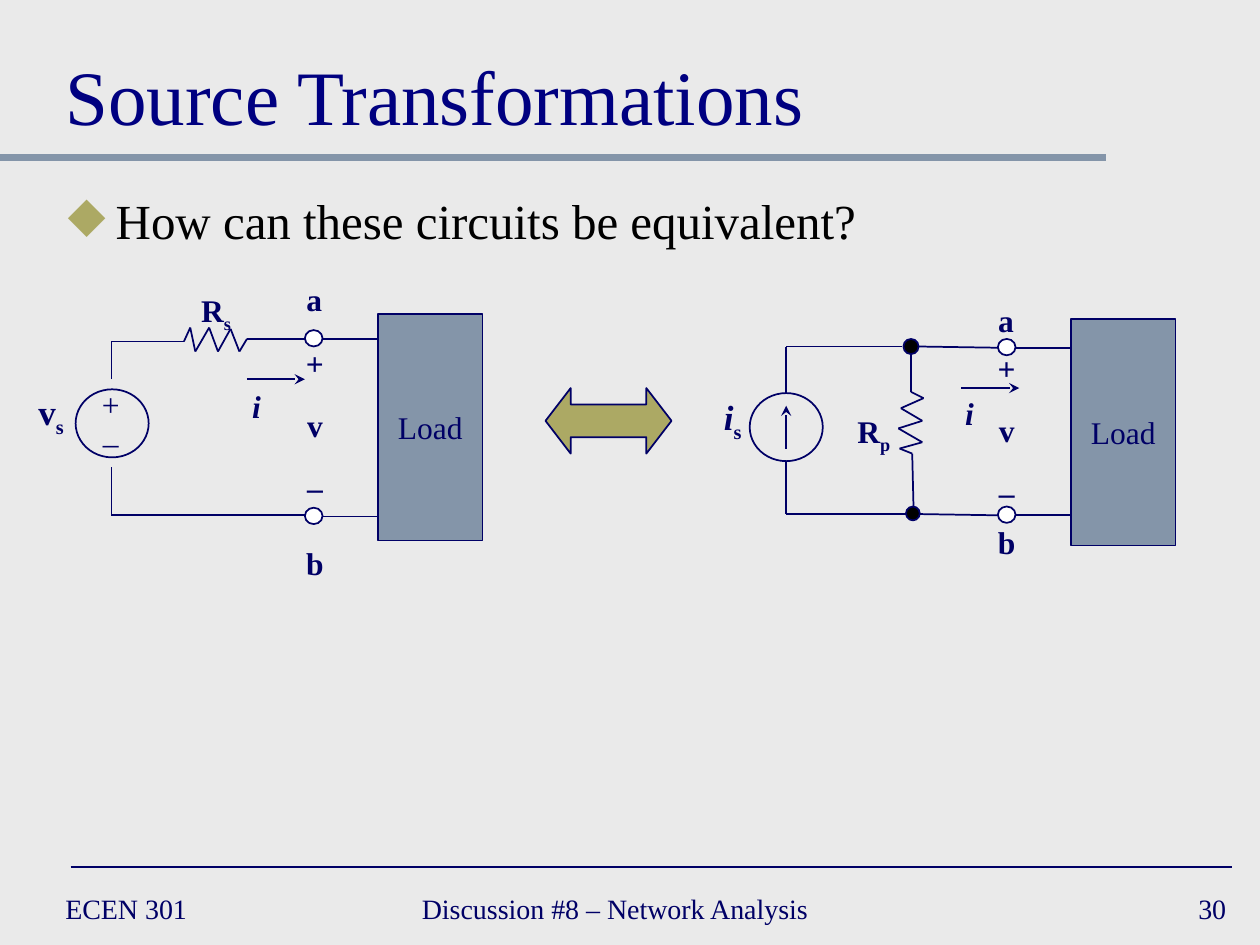
import itertools
import lxml.etree
import pptx
import pptx.util
import pptx.dml.color
import pptx.enum.shapes
import pptx.enum.text
import pptx.oxml.ns


class Theme:
    font = "Times New Roman"
    back, ink, head, black, white = "EAEAEA", "000066", "000080", "000000", "FFFFFF"
    steel, gold = "8495A9", "ACA964"
    title, body, source, label, foot = 44, 28, 20, 18, 16
    thin, thick = 1, 4


Pt = pptx.util.Pt
Kind = pptx.enum.shapes.MSO_SHAPE
Align = pptx.enum.text.PP_ALIGN
Anchor = pptx.enum.text.MSO_ANCHOR
qn = pptx.oxml.ns.qn
tint = pptx.dml.color.RGBColor.from_string

deck = pptx.Presentation()
deck.slide_width = pptx.util.Inches(10)
deck.slide_height = pptx.util.Inches(7.5)
col = deck.slide_width / 100
row = deck.slide_height / 75
slide = deck.slides.add_slide(deck.slide_layouts[5])
slide.background.fill.solid()
slide.background.fill.fore_color.rgb = tint(Theme.back)
shapes = slide.shapes


def write(text, x=0, y=0, w=0, h=0, box=None, sub="", size=Theme.label, color=Theme.ink,
          bold=False, italic=False, align=Align.CENTER, anchor=Anchor.TOP, wrap=False,
          gap=0, bullet=""):
    box = box or shapes.add_textbox(int(x * col), int(y * row), int(w * col), int(h * row))
    frame = box.text_frame
    frame.word_wrap = wrap
    frame.vertical_anchor = anchor
    for i, part in enumerate(text.split("\n")):
        para = frame.paragraphs[0] if i == 0 else frame.add_paragraph()
        if bullet:
            props = para._p.get_or_add_pPr()
            props.set("marL", str(int(3.8 * col)))
            props.set("indent", str(int(-3.8 * col)))
            shade = lxml.etree.SubElement(props, qn("a:buClr"))
            lxml.etree.SubElement(shade, qn("a:srgbClr"), val=Theme.gold)
            lxml.etree.SubElement(props, qn("a:buChar"), char=bullet)
        para.alignment = align
        if i:
            para.space_before = Pt(gap)
        for word in filter(None, (part, sub)):
            run = para.add_run()
            run.text = word
            run.font.name = Theme.font
            run.font.size = Pt(size)
            run.font.bold = bold
            run.font.italic = italic and word is part
            run.font.color.rgb = tint(color)
            if word is sub:
                run._r.get_or_add_rPr().set("baseline", "-25000")


def wire(*points, color=Theme.ink, width=Theme.thin, arrow=False):
    for (x1, y1), (x2, y2) in itertools.pairwise(points):
        line = shapes.add_connector(pptx.enum.shapes.MSO_CONNECTOR.STRAIGHT,
                                    int(x1 * col), int(y1 * row), int(x2 * col), int(y2 * row))
        line.line.color.rgb = tint(color)
        line.line.width = Pt(width)
        lxml.etree.SubElement(line._element.spPr, qn("a:effectLst"))
        if arrow:
            lxml.etree.SubElement(line.line._get_or_add_ln(), qn("a:tailEnd"), type="stealth")


wire((0, 12.5), (87.8, 12.5), color=Theme.steel, width=Theme.thick)
wire((5.6, 68.8), (97.8, 68.8))
for text, x, w, align in (("ECEN 301", 4.2, 21.7, Align.LEFT),
                          ("Discussion #8 – Network Analysis", 32.5, 38.3, Align.LEFT),
                          ("30", 77.5, 20.8, Align.RIGHT)):
    write(text, x, 70, w, 4.2, size=Theme.foot, align=align, anchor=Anchor.MIDDLE, wrap=True)

title = shapes.title
title.left, title.top = int(4.2 * col), int(1.7 * row)
title.width, title.height = int(91.7 * col), int(10 * row)
write("Source Transformations", box=title, size=Theme.title, color=Theme.head,
      align=Align.LEFT, anchor=Anchor.BOTTOM, wrap=True)
write("How can these circuits be equivalent?", 4.4, 14.6, 88.3, 7.9, size=Theme.body,
      color=Theme.black, align=Align.LEFT, wrap=True, bullet="◆")

wire((8.85, 30.1), (8.85, 27.1), (14.6, 27.1), (15.1, 26), (15.5, 27.9), (16.6, 26),
     (17.3, 27.9), (18.3, 26.1), (19, 27.9), (19.6, 26.9), (24.2, 26.9))
wire((8.85, 37.1), (8.85, 40.9), (24.2, 40.9))
wire((62.4, 31.2), (62.4, 27.5), (71.6, 27.5))
wire((62.4, 36.6), (62.4, 40.8), (71.9, 40.8))
wire((72.3, 28.1), (72.3, 31.1), (73.3, 31.6), (71.5, 32.4), (73.2, 33.4), (71.3, 34),
     (73.2, 35.1), (71.4, 35.6), (72.4, 36), (72.5, 40.2))
wire((72.9, 27.5), (79.2, 27.6))
wire((73, 40.8), (79.2, 40.9))
wire((62.4, 35.6), (62.4, 32.2), arrow=True)

parts = [(Kind.LEFT_RIGHT_ARROW, 43.3, 30.8, 10, 5.2, Theme.gold),
         (Kind.OVAL, 6, 30.9, 5.8, 5.4, None),
         (Kind.OVAL, 59.5, 31.2, 5.8, 5.4, None),
         (Kind.OVAL, 71.7, 26.9, 1.2, 1.2, Theme.black),
         (Kind.OVAL, 71.9, 40.2, 1.1, 1.1, Theme.black)]
for x, top, base, load in ((24.2, 26.2, 40.3, 24.9), (79.2, 26.9, 40.2, 25.3)):
    parts += [(Kind.OVAL, x, y, 1.4, 1.3, Theme.white) for y in (top, base)]
    parts.append((Kind.RECTANGLE, x + 5.8, load, 8.3, 18, Theme.steel))
    for y in (top, base):
        wire((x + 1.4, y + 0.7), (x + 5.8, y + 0.7))

for kind, x, y, w, h, fill in parts:
    shape = shapes.add_shape(kind, int(x * col), int(y * row), int(w * col), int(h * row))
    shape.shadow.inherit = False
    shape.line.color.rgb = tint(Theme.ink)
    shape.line.width = Pt(Theme.thin)
    if fill:
        shape.fill.solid()
        shape.fill.fore_color.rgb = tint(fill)
    else:
        shape.fill.background()
    if kind == Kind.LEFT_RIGHT_ARROW:
        shape.adjustments[1] = 0.384
    if kind == Kind.RECTANGLE:
        write("Load", box=shape, anchor=Anchor.MIDDLE)

write("v", 2, 30.5, 4.1, 4.3, sub="s", size=Theme.source, bold=True)
write("i", 56.4, 30.9, 3.5, 4.3, sub="s", size=Theme.source, bold=True, italic=True)
write("+\n–", 7.1, 30.1, 3.4, 7)
write("R", 14.9, 22.6, 4.5, 4, sub="s", bold=True)
write("R", 67, 32.2, 4.7, 4, sub="p", bold=True)

for x, a, b, volt, flow, amp in ((23.3, 21.7, 42.7, 26.8, (19.6, 30.1), (19, 30.2)),
                                 (78.2, 23.4, 41, 27.2, (76.3, 30.8), (75.6, 30.8))):
    write("a", x, a, 3.3, 4, bold=True)
    write("b", x, b, 3.4, 4, bold=True)
    write("+\nv\n–", x, volt, 3.4, 14, bold=True, gap=14)
    write("i", *amp, 2.7, 4, bold=True, italic=True)
    wire(flow, (flow[0] + 4.6, flow[1]), arrow=True)

deck.save("out.pptx")
